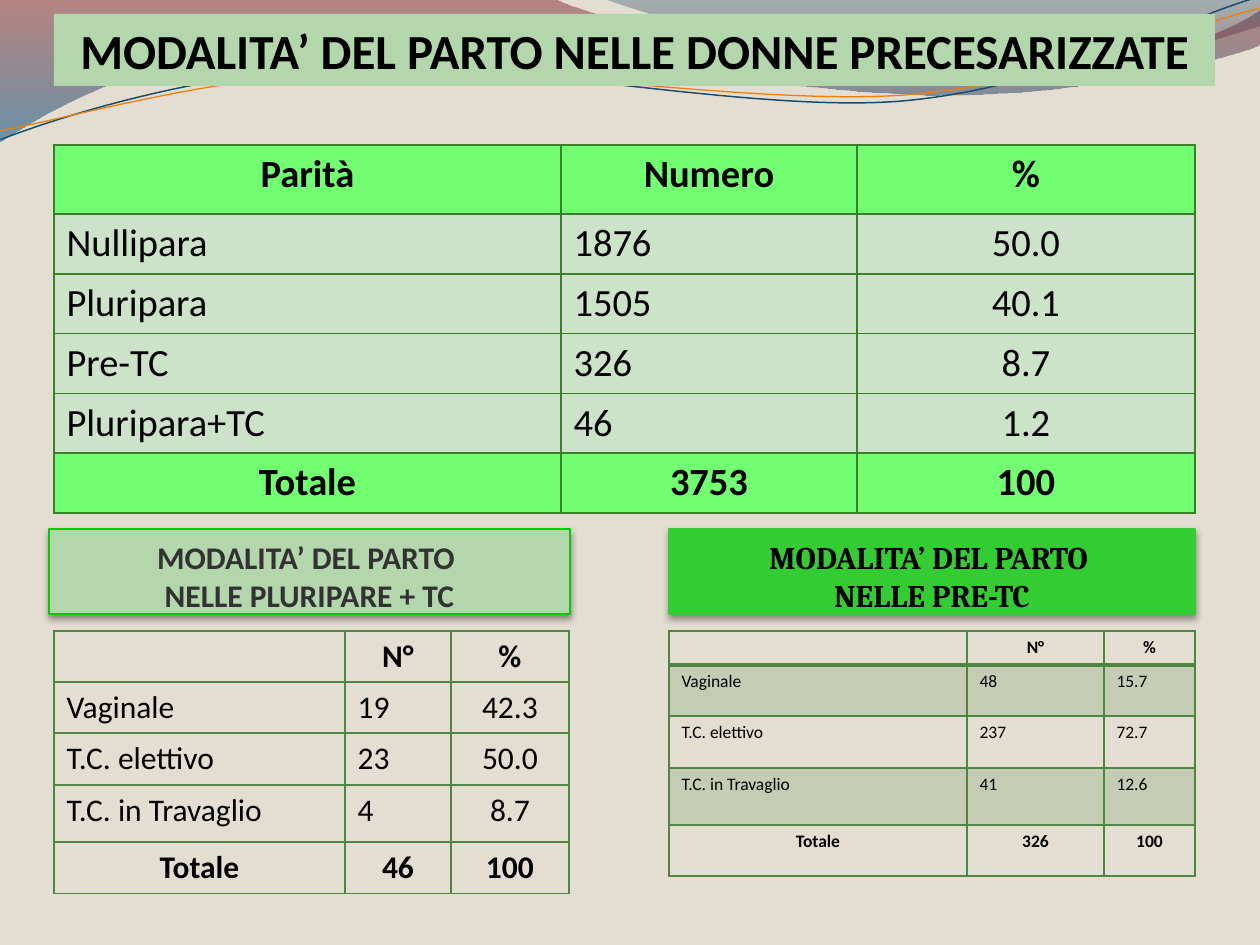
from lxml import etree
from pptx import Presentation
from pptx.dml.color import RGBColor
from pptx.enum.shapes import MSO_SHAPE
from pptx.enum.text import MSO_ANCHOR, MSO_AUTO_SIZE, PP_ALIGN
from pptx.oxml.ns import qn
from pptx.util import Emu, Pt

PX = 914400 / 126  # EMU in one px
LEFT, CENTER = PP_ALIGN.LEFT, PP_ALIGN.CENTER
TOP, BOTTOM = MSO_ANCHOR.TOP, MSO_ANCHOR.BOTTOM
RECTANGLE = MSO_SHAPE.RECTANGLE
NO_AUTOFIT = MSO_AUTO_SIZE.NONE
PALE_GREEN, BRIGHT_GREEN, DARK_GREEN = "B3D6AC", "71FF71", "4E8542"


def px(length):
    return Emu(round(length * PX))


def rgb(code):
    return RGBColor.from_string(code)


def child(parent, tag, **attributes):
    return etree.SubElement(parent, qn(tag), attributes)


def set_alpha(color_parent, percent):
    color = next(color_parent.iter(qn("a:srgbClr")))
    child(color, "a:alpha", val=str(percent * 1000))


def style_text(paragraph, text, size, bold=False, align=LEFT, color="000000", face="Calibri"):
    paragraph.text = text
    paragraph.alignment = align
    font = paragraph.font
    font.name, font.size, font.bold = face, Pt(size), bold
    font.color.rgb = rgb(color)


# --- Background waves ---
def add_wave(shapes, start, segments, closed):
    """A segment of two numbers is a straight line, one of six a cubic curve."""
    points = [pair for segment in segments for pair in zip(segment[::2], segment[1::2])]
    builder = shapes.build_freeform(*start, scale=PX)
    builder.add_line_segments(points, close=closed)
    wave = builder.convert_to_shape()
    wave.shadow.inherit = False
    # Join the three points of each curve into one Bézier command
    steps = list(wave._element.iter(qn("a:lnTo")))
    for segment in segments:
        count = len(segment) // 2
        curve, steps = steps[:count], steps[count:]
        if count == 3:
            bezier = etree.Element(qn("a:cubicBezTo"))
            curve[0].addprevious(bezier)
            for step in curve:
                bezier.append(step[0])
                step.getparent().remove(step)
    return wave


def add_wave_band(shapes, start, segments, stops):
    band = add_wave(shapes, start, segments, True)
    band.line.fill.background()
    band.fill.gradient()
    band.fill.gradient_angle = 270
    stop_elements = band._element.iter(qn("a:gs"))
    for stop, element, (position, color, alpha) in zip(
            band.fill.gradient_stops, stop_elements, stops):
        stop.position = position
        stop.color.rgb = rgb(color)
        set_alpha(element, alpha)


def add_wave_line(shapes, start, segments, color, width):
    wave = add_wave(shapes, start, segments, False)
    wave.rotation = 357.3
    wave.fill.background()
    wave.line.color.rgb = rgb(color)
    wave.line.width = Pt(width)


def add_waves(slide):
    add_wave_band(slide.shapes, (0, -1), [
        (554, -1), (600, 21, 837, 79, 955, 79), (1075, 79, 1207, 47, 1260, 11),
        (1261, 45), (1239, 55, 1096, 96, 940, 95), (784, 95, 481, 35, 324, 43),
        (163, 44, 58, 105, -1, 142),
    ], [(0, "7E1621", 45), (1, "005689", 55)])
    add_wave_band(slide.shapes, (604, -1), [
        (641, 14, 859, 78, 969, 82), (1079, 87, 1211, 40, 1260, 26), (1260, 0),
    ], [(0, "094467", 30), (0.8, "A10F1F", 45)])
    wave_lines = slide.shapes.add_group_shape().shapes
    add_wave_line(wave_lines, (-2, 110), [
        (58, 90, 199, 52, 350, 53), (499, 53, 745, 118, 896, 114),
        (1049, 109, 1184, 45, 1260, 27)], "184E6D", 0.85)
    add_wave_line(wave_lines, (-2, 101), [
        (57, 94, 207, 57, 357, 58), (509, 58, 750, 111, 902, 108),
        (1052, 104, 1188, 52, 1262, 38)], "F07F09", 0.75)


# --- Headings ---
def add_banner(slide, box, text):
    banner = slide.shapes.add_shape(RECTANGLE, *map(px, box))
    banner.shadow.inherit = False
    banner.fill.solid()
    banner.fill.fore_color.rgb = rgb(PALE_GREEN)
    banner.line.fill.background()
    banner.text_frame.word_wrap = True
    banner.text_frame.vertical_anchor = TOP
    style_text(banner.text_frame.paragraphs[0], text, 28, True, CENTER)


def format_heading(heading, box, text, fill, line, width, color, face):
    heading.left, heading.top, heading.width, heading.height = map(px, box)
    heading.fill.solid()
    heading.fill.fore_color.rgb = rgb(fill)
    heading.line.color.rgb = rgb(line)
    heading.line.width = Pt(width)
    frame = heading.text_frame
    frame.word_wrap, frame.auto_size, frame.vertical_anchor = True, NO_AUTOFIT, BOTTOM
    frame.margin_left = frame.margin_right = frame.margin_bottom = 0
    frame.margin_top = px(6)
    style_text(frame.paragraphs[0], text, 18, True, CENTER, color, face)
    # Soft shadow below the box
    effects = child(heading._element.spPr, "a:effectLst")
    shadow = child(effects, "a:outerShdw", blurRad=str(Pt(4)), dist=str(Pt(2)),
                   dir="5400000", rotWithShape="0")
    child(shadow, "a:srgbClr", val="000000")
    set_alpha(shadow, 40)


# --- Tables ---
def set_borders(cell, color, widths):
    properties = cell._tc.get_or_add_tcPr()
    for index, (side, width) in enumerate(zip("LRTB", widths)):
        border = etree.Element(qn(f"a:ln{side}"), w=str(Pt(width)))
        child(child(border, "a:solidFill"), "a:srgbClr", val=color)
        properties.insert(index, border)


def add_birth_table(slide, left, top, columns, heights, rows, size, border,
                    centered=(), fills=None, header_rule=1):
    """fills holds one (colour, alpha percent) or None for each row."""
    table = slide.shapes.add_table(len(rows), len(columns), px(left), px(top),
                                   px(sum(columns)), px(sum(heights))).table
    table.first_row = table.horz_banding = False
    for column, width in zip(table.columns, columns):
        column.width = px(width)
    for r, (row, height, values) in enumerate(zip(table.rows, heights, rows)):
        row.height = px(height)
        strong = r in (0, len(rows) - 1)
        for c, (cell, value) in enumerate(zip(row.cells, values)):
            paragraph = cell.text_frame.paragraphs[0]
            style_text(paragraph, value, size, strong,
                       CENTER if strong or c in centered else LEFT)
            if not value:
                child(paragraph._p, "a:endParaRPr", sz=str(size * 100))
            if fills and fills[r]:
                color, alpha = fills[r]
                cell.fill.solid()
                cell.fill.fore_color.rgb = rgb(color)
                if alpha < 100:
                    set_alpha(cell._tc.tcPr, alpha)
            else:
                cell.fill.background()
            set_borders(cell, border, (1, 1, header_rule if r == 1 else 1,
                                       header_rule if r == 0 else 1))


def main():
    deck = Presentation()
    deck.slide_width, deck.slide_height = px(1260), px(945)
    slide = deck.slides.add_slide(deck.slide_layouts[5])
    slide.background.fill.solid()
    slide.background.fill.fore_color.rgb = rgb("E3DED1")
    add_waves(slide)

    # Births after a previous caesarean
    format_heading(slide.shapes.title, (669, 529, 526, 85),
                   "MODALITA’ DEL PARTO \vNELLE PRE-TC",
                   "33CC33", "33CC33", 0.75, "000000", "Cambria")
    band = (DARK_GREEN, 20)
    add_birth_table(slide, 669, 631, (298, 137, 91), (34, 51, 52, 57, 51), [
        ("", "N°", "%"), ("Vaginale", "48", "15.7"), ("T.C. elettivo", "237", "72.7"),
        ("T.C. in Travaglio", "41", "12.6"), ("Totale", "326", "100"),
    ], 10, DARK_GREEN, fills=(None, band, None, band, None), header_rule=2)

    # Births of multiparous women with a caesarean
    add_birth_table(slide, 54, 631, (291, 106, 118), (51, 51, 52, 57, 51), [
        ("", "N°", "%"), ("Vaginale", "19", "42.3"), ("T.C. elettivo", "23", "50.0"),
        ("T.C. in Travaglio", "4", "8.7"), ("Totale", "46", "100"),
    ], 18, DARK_GREEN, centered=(2,))
    format_heading(slide.shapes.add_shape(RECTANGLE, 0, 0, 0, 0), (49, 529, 521, 85),
                   "MODALITA’ DEL PARTO \vNELLE PLURIPARE + TC",
                   PALE_GREEN, "00CC00", 1, "323232", "Calibri")

    # Parity overview
    strong, plain = (BRIGHT_GREEN, 100), ("CDE3C9", 100)
    add_birth_table(slide, 54, 145, (507, 296, 338), (69, 60, 59, 60, 59, 60), [
        ("Parità", "Numero", "%"), ("Nullipara", "1876", "50.0"),
        ("Pluripara", "1505", "40.1"), ("Pre-TC", "326", "8.7"),
        ("Pluripara+TC", "46", "1.2"), ("Totale", "3753", "100"),
    ], 22, "3A802A", centered=(2,), fills=[strong] + [plain] * 4 + [strong])
    add_banner(slide, (54, 14, 1161, 72), "MODALITA’ DEL PARTO NELLE DONNE PRECESARIZZATE")

    deck.save("out.pptx")


if __name__ == "__main__":
    main()
